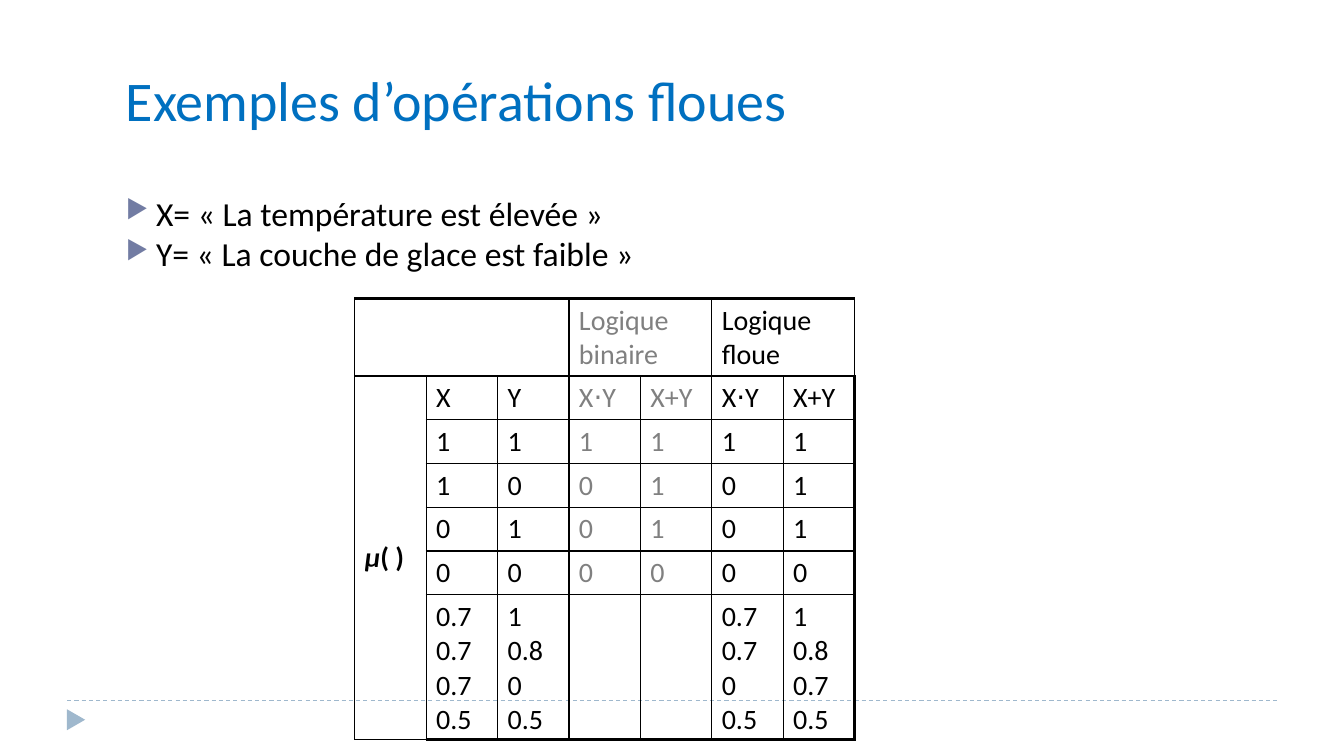
from lxml import etree
from pptx import Presentation
from pptx.dml.color import RGBColor
from pptx.enum import dml, shapes, text
from pptx.oxml import ns
from pptx.util import Pt

BLACK = RGBColor(0x00, 0x00, 0x00)
GRAY = RGBColor(0x80, 0x80, 0x80)
BLUE = RGBColor(0x00, 0x70, 0xC0)
VIOLET = RGBColor(0x72, 0x7C, 0xA3)
PALE_BLUE = RGBColor(0x9F, 0xB8, 0xCD)
FONT = "Calibri"
THIN, THICK = 1, 2.25

STATEMENTS = ["X= « La température est élevée »", "Y= « La couche de glace est faible »"]
HEADINGS = [(0, 2, ""), (3, 4, "Logique binaire"), (5, 6, "Logique floue")]
TRUTH_ROWS = [
    ["X", "Y", "X⋅Y", "X+Y", "X⋅Y", "X+Y"],
    ["1", "1", "1", "1", "1", "1"],
    ["1", "0", "0", "1", "0", "1"],
    ["0", "1", "0", "1", "0", "1"],
    ["0", "0", "0", "0", "0", "0"],
    ["0.7\n0.7\n0.7\n0.5", "1\n0.8\n0\n0.5", "", "", "0.7\n0.7\n0\n0.5", "1\n0.8\n0.7\n0.5"],
]
ROW_HEIGHTS = [55.5] + [31] * 5 + [103]
BINARY_COLUMNS = (3, 4)


def add_span(para, words, size, color, bold=False, italic=False):
    """Append one formatted run to a paragraph."""
    span = para.add_run()
    span.text = words
    font = span.font
    font.name, font.size, font.bold, font.italic = FONT, Pt(size), bold, italic
    font.color.rgb = color


def add_text_box(page, box):
    """Add an empty wrapping text box and return its frame."""
    frame = page.shapes.add_textbox(*map(Pt, box)).text_frame
    frame.word_wrap = True
    return frame


def add_footer(page, box):
    """Draw the dashed rule and the small arrow beneath it."""
    left, top, width, height = box
    rule = page.shapes.add_connector(
        shapes.MSO_CONNECTOR.STRAIGHT, Pt(left), Pt(top), Pt(left + width), Pt(top))
    rule.line.color.rgb = PALE_BLUE
    rule.line.width = Pt(0.75)
    rule.line.dash_style = dml.MSO_LINE.DASH
    etree.SubElement(rule.line._get_or_add_ln().getparent(), ns.qn("a:effectLst"))
    arrow = page.shapes.add_shape(
        shapes.MSO_SHAPE.ISOSCELES_TRIANGLE, Pt(left - 1.2), Pt(top + 7.2), Pt(15), Pt(height))
    arrow.rotation = 90
    arrow.shadow.inherit = False
    arrow.fill.solid()
    arrow.fill.fore_color.rgb = PALE_BLUE
    arrow.line.fill.background()


def add_title(page, box):
    """Write the slide title, centred vertically in its box."""
    frame = add_text_box(page, box)
    frame.vertical_anchor = text.MSO_ANCHOR.MIDDLE
    add_span(frame.paragraphs[0], "Exemples d’opérations floues", 40, BLUE)


def add_bullet(para):
    """Give a paragraph a hanging violet arrow bullet."""
    props = para._p.get_or_add_pPr()
    props.set("marL", str(Pt(21.6)))
    props.set("indent", str(-Pt(21.6)))
    color = etree.SubElement(props, ns.qn("a:buClr"))
    etree.SubElement(color, ns.qn("a:srgbClr"), val=str(VIOLET))
    etree.SubElement(props, ns.qn("a:buSzPct"), val="76000")
    etree.SubElement(props, ns.qn("a:buChar"), char="▶")


def add_statements(page, box):
    """List the two fuzzy statements as bullets."""
    frame = add_text_box(page, box)
    for index, statement in enumerate(STATEMENTS):
        para = frame.add_paragraph() if index else frame.paragraphs[0]
        para.space_before = Pt(6)
        if index:
            para.line_spacing = 0.8
        add_bullet(para)
        add_span(para, statement, 24, BLACK)


def style_cell(cell, widths):
    """Outline a cell with the given side widths and leave it unfilled."""
    props = cell._tc.get_or_add_tcPr()
    for side, width in widths.items():
        line = etree.SubElement(props, ns.qn(f"a:ln{side}"), w=str(Pt(width)))
        fill = etree.SubElement(line, ns.qn("a:solidFill"))
        etree.SubElement(fill, ns.qn("a:srgbClr"), val=str(BLACK))
    cell.fill.background()


def fill_cell(cell, words, color):
    """Write the lines of a cell as separate paragraphs."""
    for index, line in enumerate(words.split("\n") if words else []):
        frame = cell.text_frame
        para = frame.add_paragraph() if index else frame.paragraphs[0]
        add_span(para, line, 20, color)


def add_truth_table(page, box):
    """Build the table comparing binary and fuzzy logic."""
    last_row, last_column = len(ROW_HEIGHTS) - 1, len(TRUTH_ROWS[0])
    table = page.shapes.add_table(last_row + 1, last_column + 1, *map(Pt, box)).table
    table.first_row = table.horz_banding = False
    for column in table.columns:
        column.width = Pt(box[2] / (last_column + 1))
    for r, height in enumerate(ROW_HEIGHTS):
        table.rows[r].height = Pt(height)
        for c in range(last_column + 1):
            style_cell(table.cell(r, c), {
                "L": THIN,
                "R": THICK if c == last_column else THIN,
                "T": THICK if r == 0 else THIN,
                "B": THICK if r == last_row else THIN,
            })
    for first, last, heading in HEADINGS:
        table.cell(0, first).merge(table.cell(0, last))
        fill_cell(table.cell(0, first), heading, GRAY if first in BINARY_COLUMNS else BLACK)
    membership = table.cell(1, 0)
    membership.merge(table.cell(last_row, 0))
    membership.vertical_anchor = text.MSO_ANCHOR.MIDDLE
    para = membership.text_frame.paragraphs[0]
    add_span(para, "μ", 20, BLACK, bold=True, italic=True)
    add_span(para, "( )", 20, BLACK, bold=True)
    for r, values in enumerate(TRUTH_ROWS, 1):
        for c, value in enumerate(values, 1):
            fill_cell(table.cell(r, c), value, GRAY if c in BINARY_COLUMNS else BLACK)


def main():
    """Assemble the slide and save the deck."""
    deck = Presentation()
    deck.slide_width, deck.slide_height = Pt(960), Pt(540)
    page = deck.slides.add_slide(deck.slide_layouts[6])
    add_footer(page, (48, 500.4, 864, 13))
    add_title(page, (82.8, 36, 828.7, 69.8))
    add_statements(page, (82.8, 133.9, 727.2, 350.6))
    add_truth_table(page, (253.4, 213.1, 357, sum(ROW_HEIGHTS)))
    deck.save("out.pptx")


if __name__ == "__main__":
    main()
